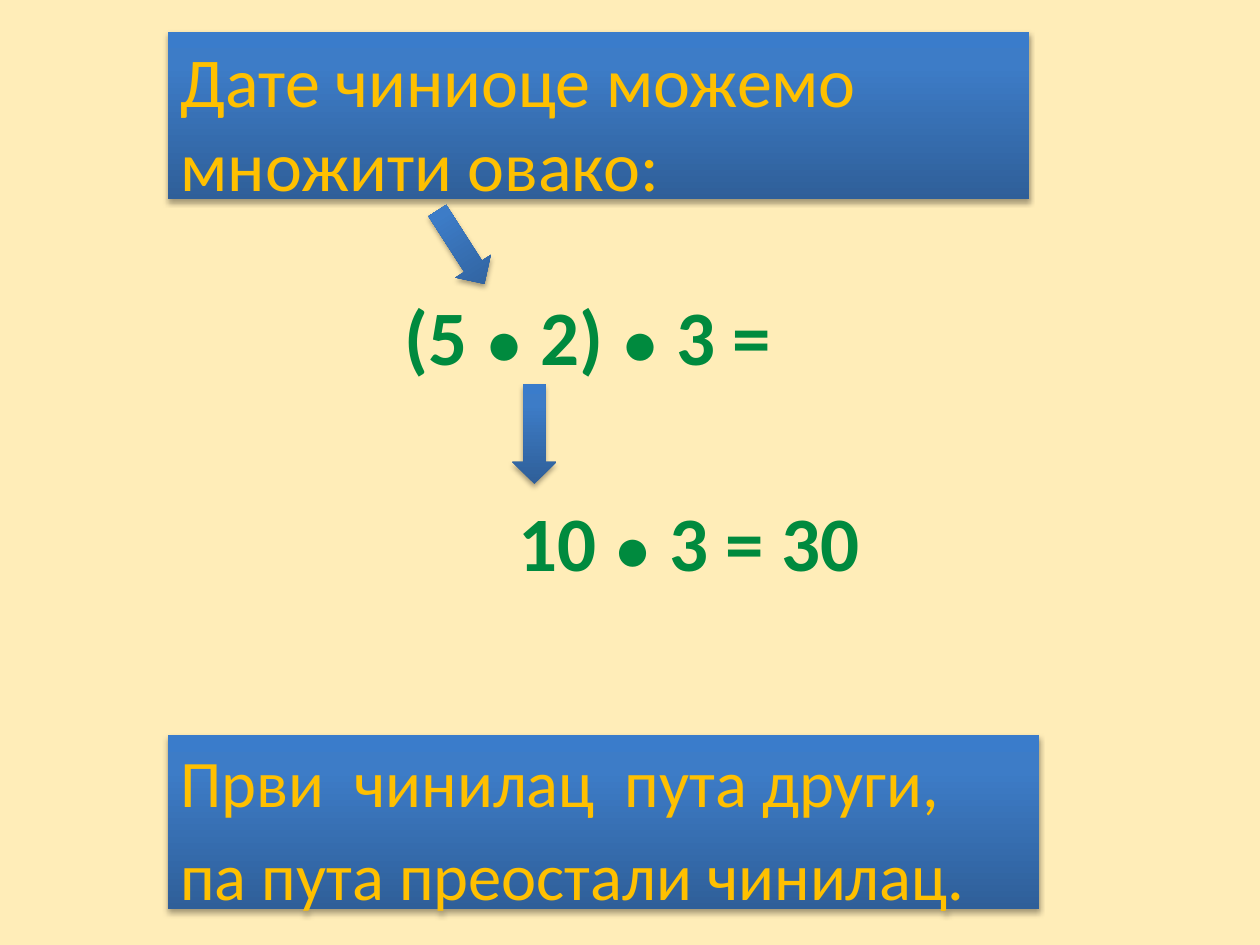
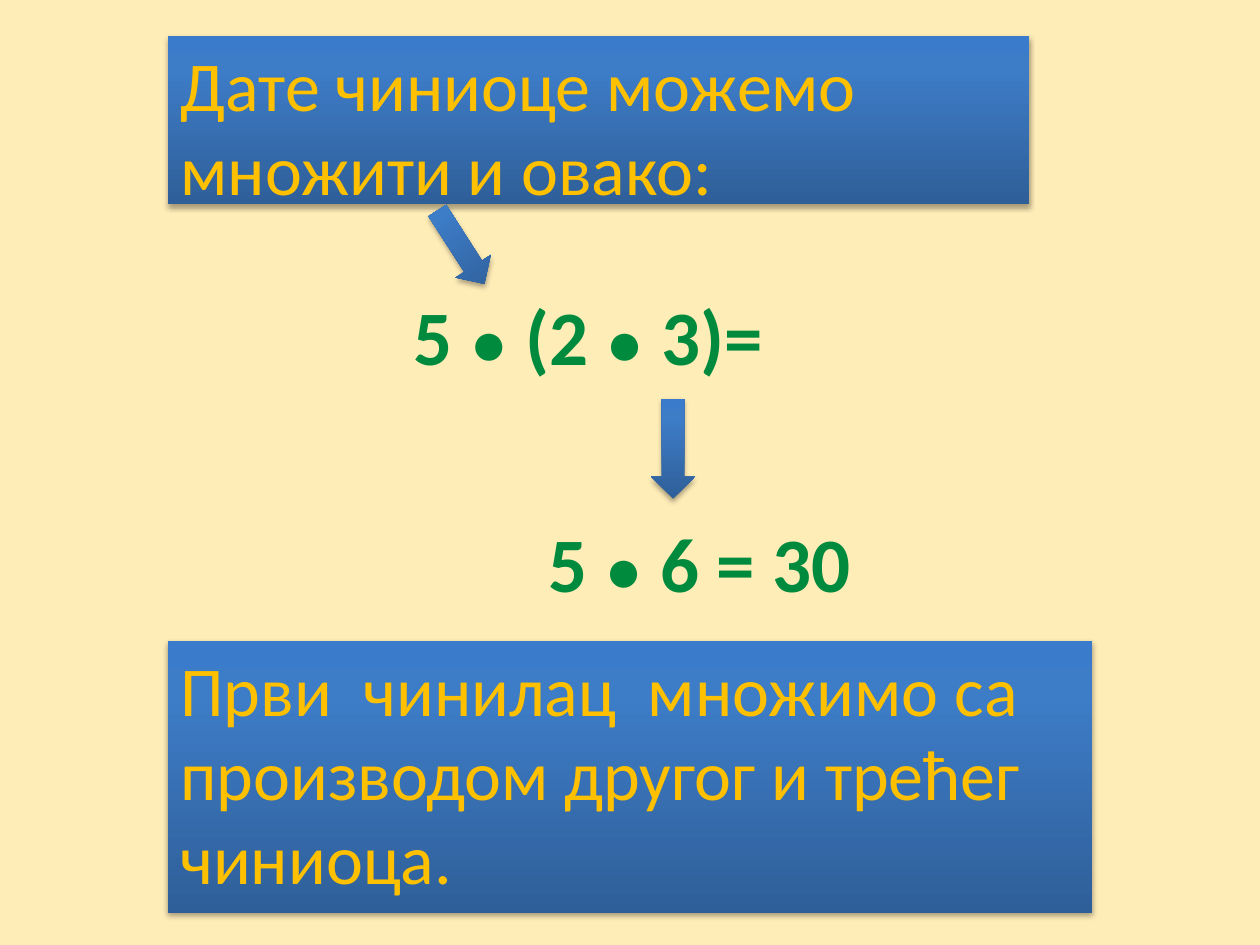
from lxml import etree
from pptx import Presentation
from pptx.dml.color import RGBColor
from pptx.enum.shapes import MSO_SHAPE as SHAPE
from pptx.enum.text import MSO_ANCHOR as ANCHOR, MSO_AUTO_SIZE as AUTO, PP_ALIGN as ALIGN
from pptx.oxml.ns import qn
from pptx.util import Inches, Pt

WIDTH, HEIGHT = Inches(10), Inches(7.5)
COLS, ROWS = 120, 90
DOT = "●"


def rgb(code):
    return RGBColor.from_string(code)


def add_color(parent, code, alpha=None):
    clr = etree.SubElement(parent, qn("a:srgbClr"), val=code)
    if alpha is not None:
        etree.SubElement(clr, qn("a:alpha"), val=str(alpha * 1000))


def write(p, text, size=40, font="Calibri", color="FFC000", bold=False):
    r = p.add_run()
    r.text = text
    r.font.size, r.font.name, r.font.bold = Pt(size), font, bold
    r.font.color.rgb = rgb(color)


class Deck:
    background = "FFEDB8"
    green = "008A3E"
    gradient = ((0, "2F5F99"), (80, "3D7CC7"), (100, "3A7CCB"))

    def __init__(self):
        self.prs = Presentation()
        self.prs.slide_width, self.prs.slide_height = WIDTH, HEIGHT
        self.s = None

    def new_slide(self):
        self.s = self.prs.slides.add_slide(self.prs.slide_layouts[5])
        fill = self.s.background.fill
        fill.solid()
        fill.fore_color.rgb = rgb(self.background)

    def box(self, col, row, cols, rows):
        """Turn grid columns and rows into left, top, width and height."""
        return (round(col * WIDTH / COLS), round(row * HEIGHT / ROWS),
                round(cols * WIDTH / COLS), round(rows * HEIGHT / ROWS))

    def blue_shape(self, kind, *area):
        """Add a preset shape with the blue gradient and a soft shadow below."""
        sp = self.s.shapes.add_shape(kind, *self.box(*area))
        sp.line.fill.background()
        sp.fill.gradient()
        sp.fill.gradient_angle = 90
        stops = sp.element.spPr.find(".//" + qn("a:gsLst"))
        stops.clear()
        for pos, code in self.gradient:
            add_color(etree.SubElement(stops, qn("a:gs"), pos=str(pos * 1000)), code)
        sp.shadow.inherit = False
        shadow = etree.SubElement(
            sp.element.spPr.find(qn("a:effectLst")), qn("a:outerShdw"),
            blurRad=str(Pt(3.1)), dist=str(Pt(1.8)), dir="5400000", rotWithShape="0")
        add_color(shadow, "000000", alpha=35)
        return sp

    def panel(self, *area, lines, size=40):
        tf = self.blue_shape(SHAPE.RECTANGLE, *area).text_frame
        tf.word_wrap, tf.vertical_anchor = True, ANCHOR.TOP
        for i, line in enumerate(lines):
            p = tf.add_paragraph() if i else tf.paragraphs[0]
            p.alignment = ALIGN.LEFT
            p.space_before = Pt(0.2 * size if i else 0)
            write(p, line, size=size)

    def arrow(self, *area, rotation=0):
        self.blue_shape(SHAPE.DOWN_ARROW, *area).rotation = rotation

    def equation(self, sp, text, indent=0):
        """Write centred green text whose multiplication dots are smaller."""
        tf = sp.text_frame
        tf.word_wrap, tf.auto_size = True, AUTO.NONE
        tf.vertical_anchor = ANCHOR.MIDDLE
        tf.margin_left = Inches(0.1 + indent)
        p = tf.paragraphs[0]
        p.alignment = ALIGN.CENTER
        for i, part in enumerate(text.split(DOT)):
            if i:
                write(p, DOT, size=36, font="Arial", color=self.green, bold=True)
            write(p, part, size=44, color=self.green, bold=True)

    def title(self, text):
        sp = self.s.shapes.title
        sp.left, sp.top, sp.width, sp.height = self.box(2, 24.4, 108, 15)
        self.equation(sp, text)

    def result(self, col, row, text):
        sp = self.s.shapes.add_textbox(*self.box(col, row, 108, 15))
        self.equation(sp, text, indent=1.1)

    def product_slide(self, intro, intro_row, task, rule, rule_area, rule_size,
                      result, result_at, arrow_at):
        self.new_slide()
        self.title(task)
        self.panel(*rule_area, lines=rule, size=rule_size)
        self.panel(16, intro_row, 82, 16, lines=[intro])
        self.result(*result_at, result)
        self.arrow(41.9, 19.4, 4, 8.3, rotation=327.3)
        self.arrow(*arrow_at, 4.2, 9.5)


def main():
    deck = Deck()
    deck.product_slide(
        intro="Дате чиниоце можемо множити овако:", intro_row=3,
        task="(5 ● 2) ● 3 =",
        rule=["Први  чинилац  пута други,", "па пута преостали чинилац."],
        rule_area=(16, 70, 83, 16.6), rule_size=38,
        result="10 ● 3 = 30", result_at=(5, 44), arrow_at=(48.8, 36.6))
    deck.product_slide(
        intro="Дате чиниоце можемо множити и овако:", intro_row=3.4,
        task="5 ● (2 ● 3)=",
        rule=["Први  чинилац  множимо са производом другог и трећег чиниоца."],
        rule_area=(16, 61, 88, 26), rule_size=40,
        result="5 ● 6 = 30", result_at=(6, 46), arrow_at=(62, 38))
    deck.prs.save("out.pptx")


if __name__ == "__main__":
    main()
